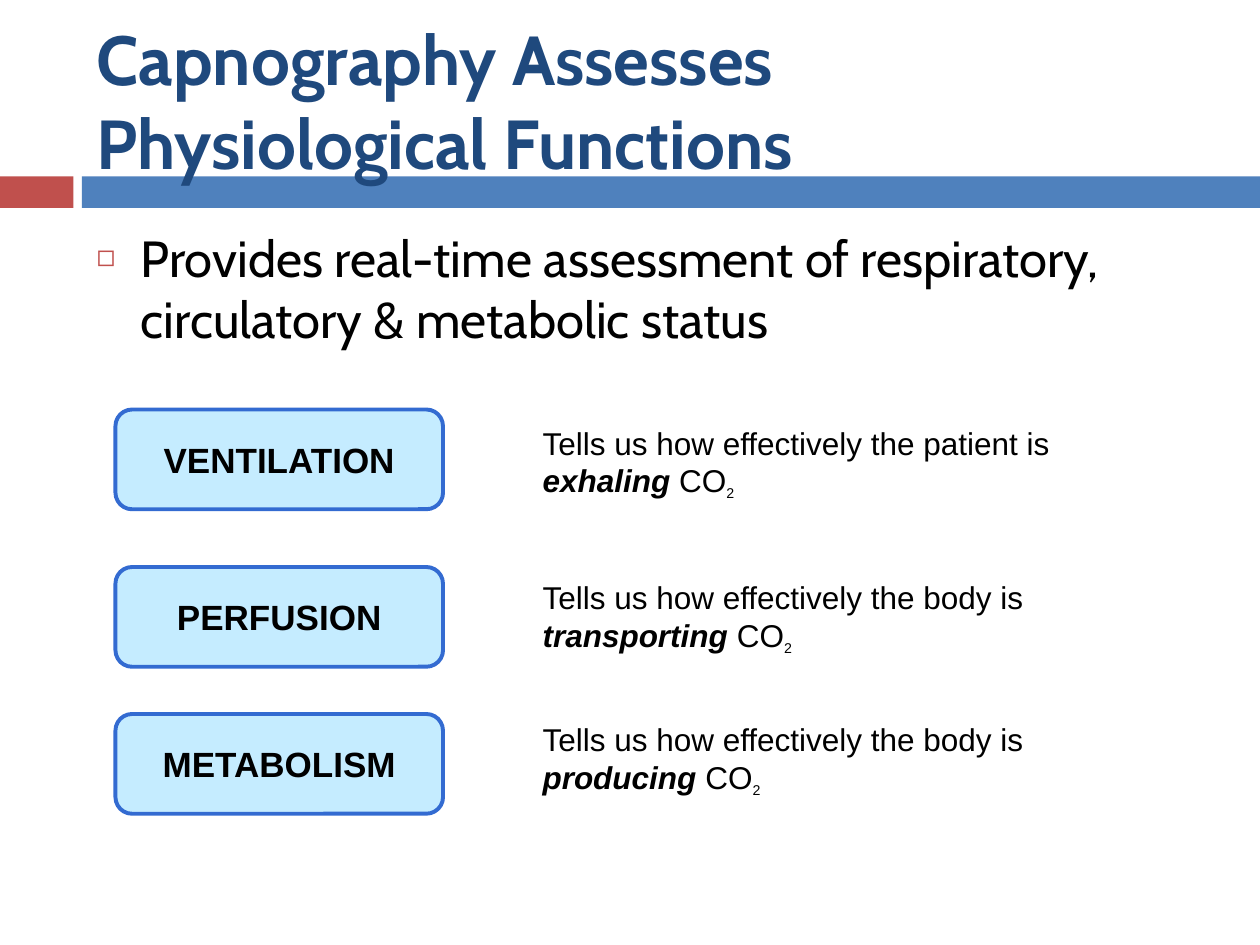
import pptx
import pptx.dml.color
import pptx.enum.shapes
import pptx.enum.text
import pptx.oxml
import pptx.oxml.ns
import pptx.util
from dataclasses import dataclass

Pt = pptx.util.Pt
ALIGN = pptx.enum.text.PP_ALIGN
ANCHOR = pptx.enum.text.MSO_ANCHOR
AUTO = pptx.enum.text.MSO_AUTO_SIZE
SHAPE = pptx.enum.shapes.MSO_SHAPE


@dataclass(frozen=True)
class Theme:
    heading_font: str = "Cabin"
    label_font: str = "Arial"
    title: str = "1F497D"
    text: str = "000000"
    accent: str = "C0504D"
    band: str = "4F81BD"
    box_fill: str = "C5ECFF"
    box_line: str = "336BD1"
    title_size: float = 39.6
    body_size: float = 29
    label_size: float = 20
    note_size: float = 18
    sub_size: float = 14


class SlideBuilder:
    def __init__(self, prs, theme):
        self.theme = theme
        self.s = prs.slides.add_slide(prs.slide_layouts[1])

    def color(self, value):
        return pptx.dml.color.RGBColor.from_string(value)

    def run(self, p, text, font, size, color, bold=False, italic=False):
        r = p.add_run()
        r.text = text
        r.font.name, r.font.size = font, Pt(size)
        r.font.bold, r.font.italic = bold, italic
        r.font.color.rgb = self.color(color)
        return r

    def place(self, sp, left, top, width, height):
        sp.left, sp.top, sp.width, sp.height = map(Pt, (left, top, width, height))

    def shape(self, kind, box, fill, line=None):
        sp = self.s.shapes.add_shape(kind, *map(Pt, box))
        sp.shadow.inherit = False
        sp.fill.solid()
        sp.fill.fore_color.rgb = self.color(fill)
        if line:
            sp.line.color.rgb = self.color(line)
            sp.line.width = Pt(2.25)
        else:
            sp.line.fill.background()
        return sp

    def title(self, lines, box):
        t = self.theme
        sp = self.s.shapes.title
        self.place(sp, *box)
        tf = sp.text_frame
        tf.auto_size, tf.vertical_anchor = AUTO.NONE, ANCHOR.MIDDLE
        p = tf.paragraphs[0]
        p.alignment = ALIGN.LEFT
        for i, line in enumerate(lines):
            if i:
                p.add_line_break()
            self.run(p, line, t.heading_font, t.title_size, t.title, bold=True)

    def bullet(self, text, box):
        t = self.theme
        sp = self.s.placeholders[1]
        self.place(sp, *box)
        tf = sp.text_frame
        tf.auto_size = AUTO.NONE
        p = tf.paragraphs[0]
        p.space_before = Pt(7)
        self.run(p, text, t.heading_font, t.body_size, t.text)
        # Hollow square bullet with a hanging indent
        pPr = p._p.get_or_add_pPr()
        pPr.set("marL", str(Pt(25.2)))
        pPr.set("indent", str(-Pt(25.2)))
        ns = pptx.oxml.ns.nsdecls("a")
        for xml in (
            f'<a:buClr {ns}><a:srgbClr val="{t.accent}"/></a:buClr>',
            f'<a:buSzPct {ns} val="60000"/>',
            f'<a:buChar {ns} char="◻"/>',
        ):
            pPr.append(pptx.oxml.parse_xml(xml))

    def label(self, text, box):
        t = self.theme
        sp = self.shape(SHAPE.ROUNDED_RECTANGLE, box, t.box_fill, t.box_line)
        tf = sp.text_frame
        tf.word_wrap, tf.vertical_anchor = False, ANCHOR.MIDDLE
        p = tf.paragraphs[0]
        p.alignment = ALIGN.CENTER
        self.run(p, text, t.label_font, t.label_size, t.text, bold=True)

    def note(self, subject, verb, box):
        t = self.theme
        tf = self.s.shapes.add_textbox(*map(Pt, box)).text_frame
        tf.word_wrap, tf.auto_size = True, AUTO.SHAPE_TO_FIT_TEXT
        p = tf.paragraphs[0]
        style = (t.label_font, t.note_size, t.text)
        self.run(p, f"Tells us how effectively the {subject} is ", *style)
        self.run(p, verb, *style, bold=True, italic=True)
        self.run(p, " CO", *style)
        r = self.run(p, "2", t.label_font, t.sub_size, t.text)
        r.font._element.set("baseline", "-25000")


def main():
    prs = pptx.Presentation()
    prs.slide_width, prs.slide_height = Pt(720), Pt(540)
    theme = Theme()
    b = SlideBuilder(prs, theme)

    # Heading and list
    b.title(["Capnography Assesses ", "Physiological Functions"], (48, 18, 642, 78))
    b.bullet("Provides real-time assessment of respiratory, circulatory & metabolic status",
             (48, 126, 642, 354))

    # Divider band, sent behind the title
    for i, (left, width, fill) in enumerate([(0, 42, theme.accent), (46.8, 673.2, theme.band)]):
        sp = b.shape(SHAPE.RECTANGLE, (left, 100.8, width, 18), fill)
        b.s.shapes._spTree.insert(2 + i, sp._element)

    # Functions: label, its top, note top, subject, verb
    rows = [
        ("VENTILATION", 234, 238.5, "patient", "exhaling"),
        ("PERFUSION", 324, 327, "body", "transporting"),
        ("METABOLISM", 408, 408, "body", "producing"),
    ]
    for name, top, note_top, subject, verb in rows:
        b.label(name, (66, top, 187.2, 57))
        b.note(subject, verb, (303, note_top, 318, 50.4))

    prs.save("out.pptx")


if __name__ == "__main__":
    main()
